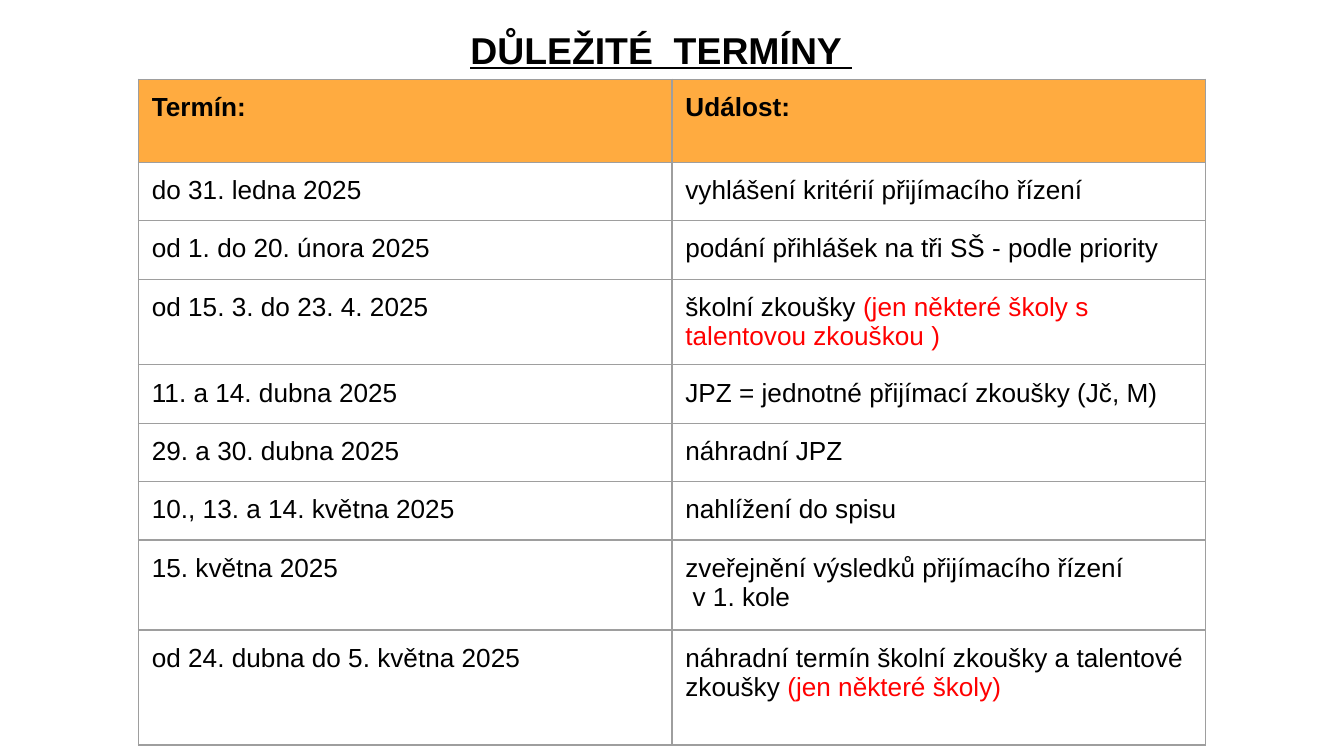
from pptx import Presentation
from pptx import util as u
from pptx.dml.color import RGBColor
from pptx.enum import text
from pptx.oxml import parse_xml
from pptx.oxml.ns import nsdecls

BLACK = RGBColor(0, 0, 0)
RED = RGBColor(0xFF, 0, 0)
AMBER = RGBColor(0xFF, 0xAB, 0x40)
GREY = RGBColor(0x9E, 0x9E, 0x9E)
LINE = 31.3  # height of a one-line row, in points

# Each row: height, date, event lines; a line is a list of runs (every second run is red).
ROWS = [
    (44.5, "Termín:", [["Událost:"]]),
    (LINE, "do 31. ledna 2025", [["vyhlášení kritérií přijímacího řízení"]]),
    (LINE, "od 1. do 20. února 2025", [["podání přihlášek na tři SŠ - podle priority"]]),
    (45.7, "od 15. 3. do 23. 4. 2025",
     [["školní zkoušky ", "(jen některé školy s talentovou zkouškou )"]]),
    (LINE, "11. a 14. dubna 2025", [["JPZ = jednotné přijímací zkoušky (Jč, M)"]]),
    (LINE, "29. a 30. dubna 2025", [["náhradní JPZ"]]),
    (LINE, "10., 13. a 14. května 2025", [["nahlížení do spisu"]]),
    (48.2, "15. května 2025", [["zveřejnění výsledků přijímacího řízení"], [" v 1. kole"]]),
    (61.6, "od 24. dubna do 5. května 2025",
     [["náhradní termín školní zkoušky a talentové"], ["zkoušky ", "(jen některé školy)"]]),
]


def write(frame, lines, **form):
    """Fill a text frame with lines of runs, setting the given font values."""
    for i, line in enumerate(lines):
        para = frame.add_paragraph() if i else frame.paragraphs[0]
        for j, part in enumerate(line):
            run = para.add_run()
            run.text = part
            for key, val in {"name": "Arial", **form}.items():
                setattr(run.font, key, val)
            run.font.color.rgb = RED if j % 2 else BLACK


def edge(cell):
    """Draw thin grey lines on all four sides of a cell."""
    props = cell._tc.get_or_add_tcPr()
    for i, side in enumerate("LRTB"):
        props.insert(i, parse_xml(
            f'<a:ln{side} {nsdecls("a")} w="{u.Pt(0.75)}"><a:solidFill>'
            f'<a:srgbClr val="{GREY}"/></a:solidFill></a:ln{side}>'))


deck = Presentation()
deck.slide_width = u.Inches(10)
deck.slide_height = deck.slide_width * 9 // 16
slide = deck.slides.add_slide(deck.slide_layouts[6])

# Table of dates, centred on the slide
col = u.Inches(3.97)
high = u.Pt(sum(row[0] for row in ROWS))
grid = slide.shapes.add_table(
    len(ROWS), 2, deck.slide_width // 2 - col, u.Inches(0.59), 2 * col, high).table
for r, (tall, date, event) in enumerate(ROWS):
    grid.rows[r].height = u.Pt(tall)
    for c, lines in enumerate(([[date]], event)):
        cell = grid.cell(r, c)
        for side in ("left", "right", "top", "bottom"):
            setattr(cell, f"margin_{side}", u.Inches(0.1))
        if r == 0:
            cell.fill.solid()
            cell.fill.fore_color.rgb = AMBER
        else:
            cell.fill.background()
        edge(cell)
        write(cell.text_frame, lines, size=u.Pt(14), bold=r == 0)

# Title
title = slide.shapes.add_textbox(
    u.Inches(3.39), u.Inches(0.15), u.Inches(3.06), u.Inches(0.44)).text_frame
title.word_wrap = False
title.auto_size = text.MSO_AUTO_SIZE.SHAPE_TO_FIT_TEXT
write(title, [["DŮLEŽITÉ  TERMÍNY "]], size=u.Pt(20), bold=True, underline=True)
title.paragraphs[0].alignment = text.PP_ALIGN.CENTER

deck.save("out.pptx")
